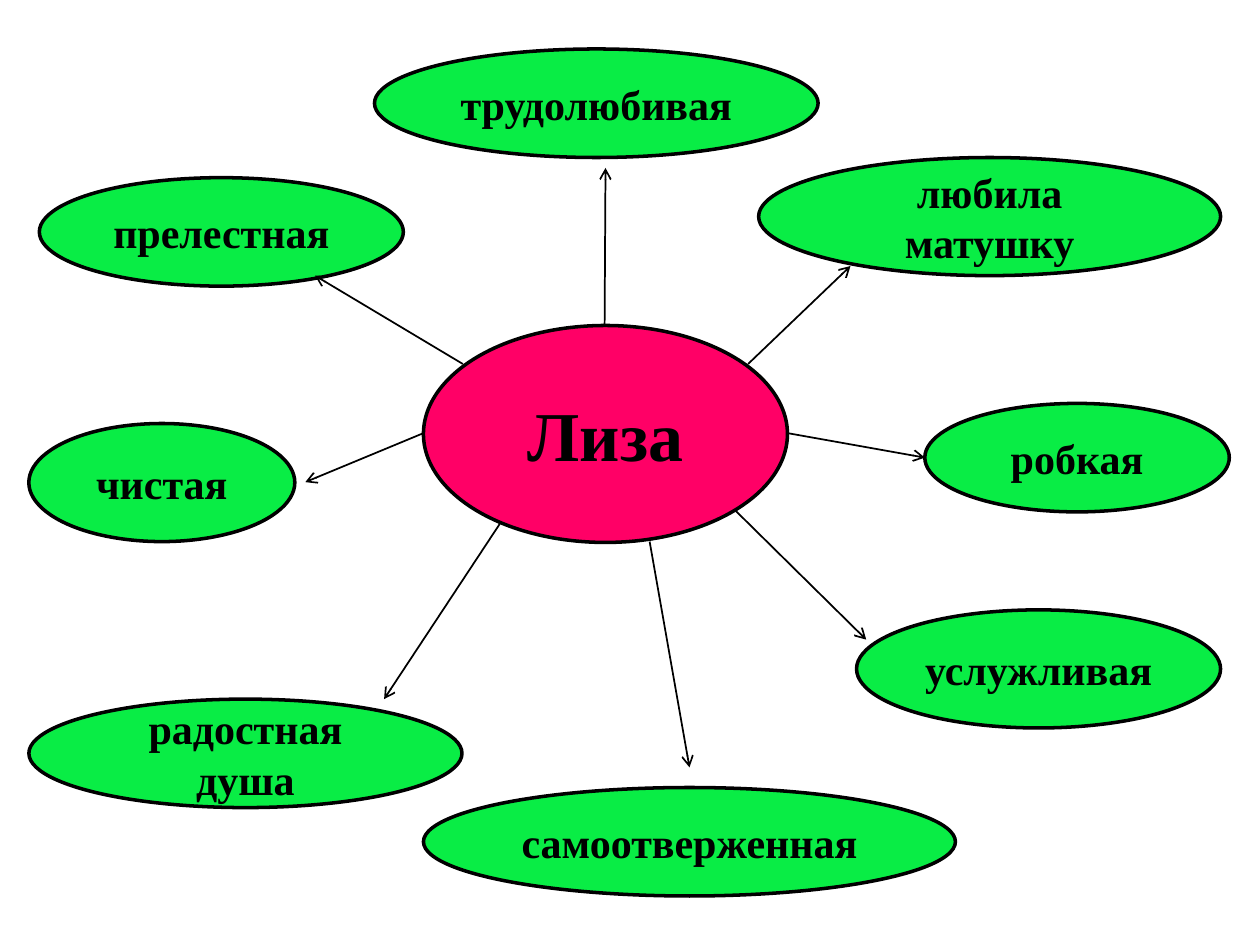
"""Build a mind map slide of Liza's character traits."""
from lxml.etree import SubElement
from pptx import Presentation
from pptx.dml.color import RGBColor
from pptx.enum.shapes import MSO_CONNECTOR as Connector, MSO_SHAPE as Shape
from pptx.enum.text import MSO_ANCHOR as Anchor, PP_ALIGN as Align
from pptx.oxml.ns import qn
from pptx.util import Pt

COLORS = {"center": "FF0066", "trait": "09ED45", "ink": "000000"}

CENTER = ("Лиза", 242, 186, 208, 124)

TRAITS = [
    ("любила матушку", 433.5, 90, 264, 67.5),
    ("трудолюбивая", 214, 28, 253.5, 62),
    ("самоотверженная", 242, 450, 304, 62),
    ("робкая", 528.5, 230.5, 174, 62),
    ("чистая", 16.5, 242, 152, 67.5),
    ("услужливая", 489.5, 348.5, 208, 67.5),
    ("радостная душа", 16.5, 399.5, 247.5, 62),
    ("прелестная", 22.5, 101.5, 208, 62),
]

ARROWS = [
    (371.25, 309.5, 394, 438.5),
    (286.5, 298, 219.5, 399.5),
    (242, 247.5, 174.5, 275.5),
    (264.5, 208, 180, 157.5),
    (345.5, 186, 346, 96),
    (427.5, 208, 486, 152),
    (450, 247.5, 528.5, 261.5),
    (420, 291.5, 495, 365.5),
]


class MindMap:
    """Hold the style and the slide being drawn."""

    def __init__(self, slide):
        self.slide = slide
        self.font = {"name": "Times New Roman", "bold": True}

    def color(self, name):
        return RGBColor.from_string(COLORS[name])

    def outline(self, line, width):
        line.color.rgb = self.color("ink")
        line.width = Pt(width)

    def bubble(self, text, left, top, width, height, fill, size):
        place = [Pt(value) for value in (left, top, width, height)]
        bubble = self.slide.shapes.add_shape(Shape.OVAL, *place)
        bubble.shadow.inherit = False
        bubble.fill.solid()
        bubble.fill.fore_color.rgb = self.color(fill)
        self.outline(bubble.line, 2)
        frame = bubble.text_frame
        frame.word_wrap = True
        frame.vertical_anchor = Anchor.MIDDLE
        para = frame.paragraphs[0]
        para.alignment = Align.CENTER
        span = para.add_run()
        span.text = text
        for name, value in {**self.font, "size": Pt(size)}.items():
            setattr(span.font, name, value)
        span.font.color.rgb = self.color("ink")

    def arrow(self, *ends):
        arrow = self.slide.shapes.add_connector(
            Connector.STRAIGHT, *[Pt(value) for value in ends])
        self.outline(arrow.line, 1)
        properties = arrow.element.spPr
        SubElement(properties.find(qn("a:ln")), qn("a:tailEnd"), type="arrow")
        SubElement(properties, qn("a:effectLst"))


def main():
    deck = Presentation()
    deck.slide_width, deck.slide_height = Pt(720), Pt(540)
    blank = deck.slide_layouts[6]
    mind_map = MindMap(deck.slides.add_slide(blank))
    mind_map.bubble(*CENTER, fill="center", size=40)
    for trait in TRAITS:
        mind_map.bubble(*trait, fill="trait", size=24)
    for ends in ARROWS:
        mind_map.arrow(*ends)
    deck.save("out.pptx")


if __name__ == "__main__":
    main()
